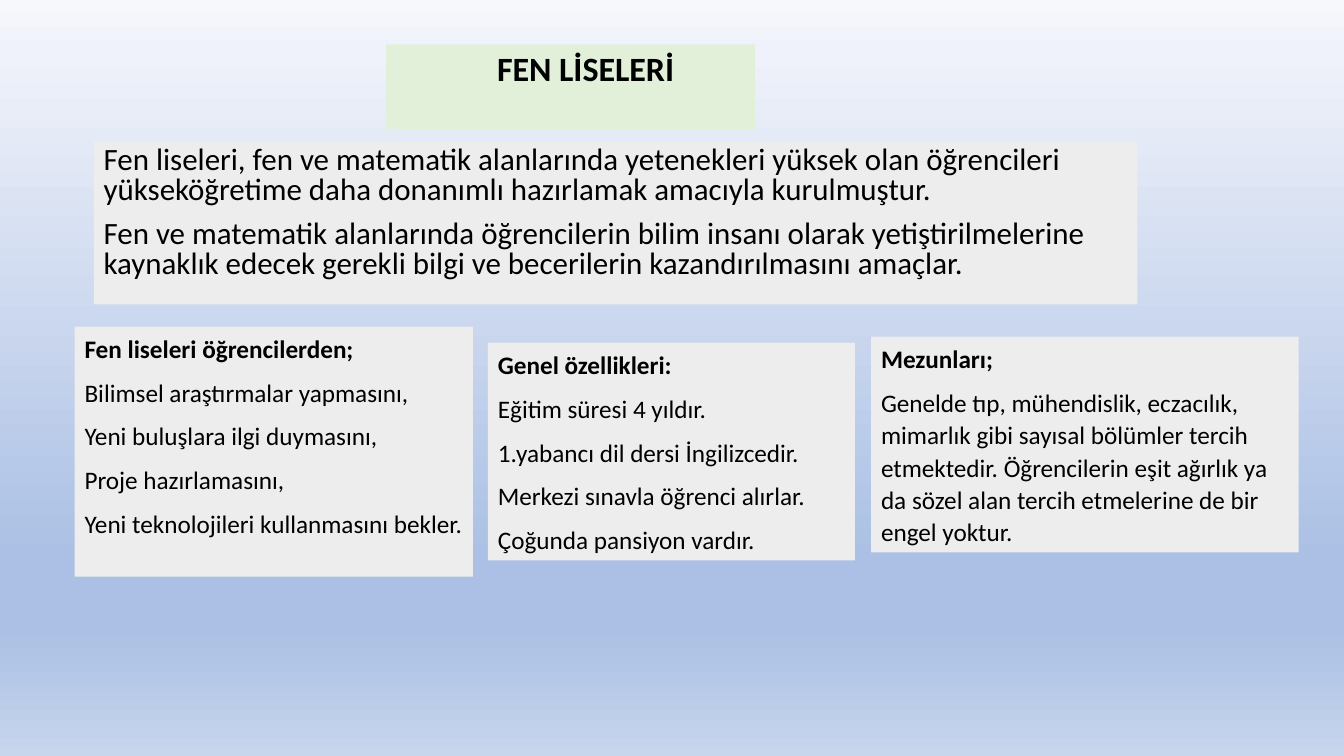
from lxml.etree import SubElement
from pptx import Presentation
from pptx.dml.color import RGBColor
from pptx.enum.text import MSO_ANCHOR, MSO_AUTO_SIZE
from pptx.oxml.ns import qn
from pptx.util import Inches, Pt

THEME = {
    "font": "Calibri",
    "text": "000000",
    "title_fill": "E2F0D9",
    "panel_fill": "EDEDED",
    "title_size": 24.3,
    "intro_size": 22.1,
    "card_size": 18,
    "background": [(0, "F6F8FC"), (7, "EFF2FA"), (74, "ABC0E4"), (83, "ABC0E4"), (100, "C7D5ED")],
}


def add_panel(slide, place, fill, size, spacing, lines, heading=True, margins=(0.1, 0.05)):
    panel = slide.shapes.add_textbox(*map(Inches, place))
    panel.fill.solid()
    panel.fill.fore_color.rgb = RGBColor.from_string(fill)
    left, top = margins
    frame_format = {
        "word_wrap": True,
        "auto_size": MSO_AUTO_SIZE.NONE,
        "vertical_anchor": MSO_ANCHOR.TOP,
        "margin_left": Inches(left),
        "margin_top": Inches(top),
        "margin_right": Inches(0.05),
    }
    for name, value in frame_format.items():
        setattr(panel.text_frame, name, value)
    panel.text_frame.text = "\n".join(lines)
    for index, paragraph in enumerate(panel.text_frame.paragraphs):
        for name, value in spacing.items():
            setattr(paragraph, name, value)
        font = paragraph.runs[0].font
        font_format = {"name": THEME["font"], "size": Pt(size), "bold": heading and index == 0}
        for name, value in font_format.items():
            setattr(font, name, value)
        font.color.rgb = RGBColor.from_string(THEME["text"])


presentation = Presentation()
presentation.slide_width = Inches(13.33)
presentation.slide_height = Inches(7.5)
slide = presentation.slides.add_slide(presentation.slide_layouts[6])

backdrop = slide.background.fill
backdrop.gradient()
backdrop.gradient_angle = 270
stops = slide.background._cSld.find(".//" + qn("a:gsLst"))
for stop in list(stops):
    stops.remove(stop)
for position, color in THEME["background"]:
    stop = SubElement(stops, qn("a:gs"), pos=str(position * 1000))
    SubElement(stop, qn("a:srgbClr"), val=color)

add_panel(
    slide, (3.83, 0.44, 3.66, 0.84), THEME["title_fill"], THEME["title_size"],
    {"line_spacing": 0.9}, ["FEN LİSELERİ"], margins=(1.1, 0.08),
)

add_panel(
    slide, (0.93, 1.41, 10.35, 1.61), THEME["panel_fill"], THEME["intro_size"],
    {"line_spacing": 0.8, "space_after": Pt(10)},
    [
        "Fen liseleri, fen ve matematik alanlarında yetenekleri yüksek olan öğrencileri "
        "yükseköğretime daha donanımlı hazırlamak amacıyla kurulmuştur.",
        "Fen ve matematik alanlarında öğrencilerin bilim insanı olarak yetiştirilmelerine "
        "kaynaklık edecek gerekli bilgi ve becerilerin kazandırılmasını amaçlar.",
    ],
    heading=False,
)

cards = [
    ((0.74, 3.24, 3.95, 2.48), [
        "Fen liseleri öğrencilerden;",
        "Bilimsel araştırmalar yapmasını,",
        "Yeni buluşlara ilgi duymasını,",
        "Proje hazırlamasını,",
        "Yeni teknolojileri kullanmasını bekler.",
    ]),
    ((4.84, 3.4, 3.64, 2.16), [
        "Genel özellikleri:",
        "Eğitim süresi 4 yıldır.",
        "1.yabancı dil dersi İngilizcedir.",
        "Merkezi sınavla öğrenci alırlar.",
        "Çoğunda pansiyon vardır.",
    ]),
    ((8.64, 3.34, 4.24, 2.14), [
        "Mezunları;",
        "Genelde tıp, mühendislik, eczacılık, mimarlık gibi sayısal bölümler tercih "
        "etmektedir. Öğrencilerin eşit ağırlık ya da sözel alan tercih etmelerine de bir "
        "engel yoktur.",
    ]),
]
for place, lines in cards:
    add_panel(
        slide, place, THEME["panel_fill"], THEME["card_size"],
        {"line_spacing": 1.07, "space_after": Pt(8)}, lines,
    )

presentation.save("out.pptx")
